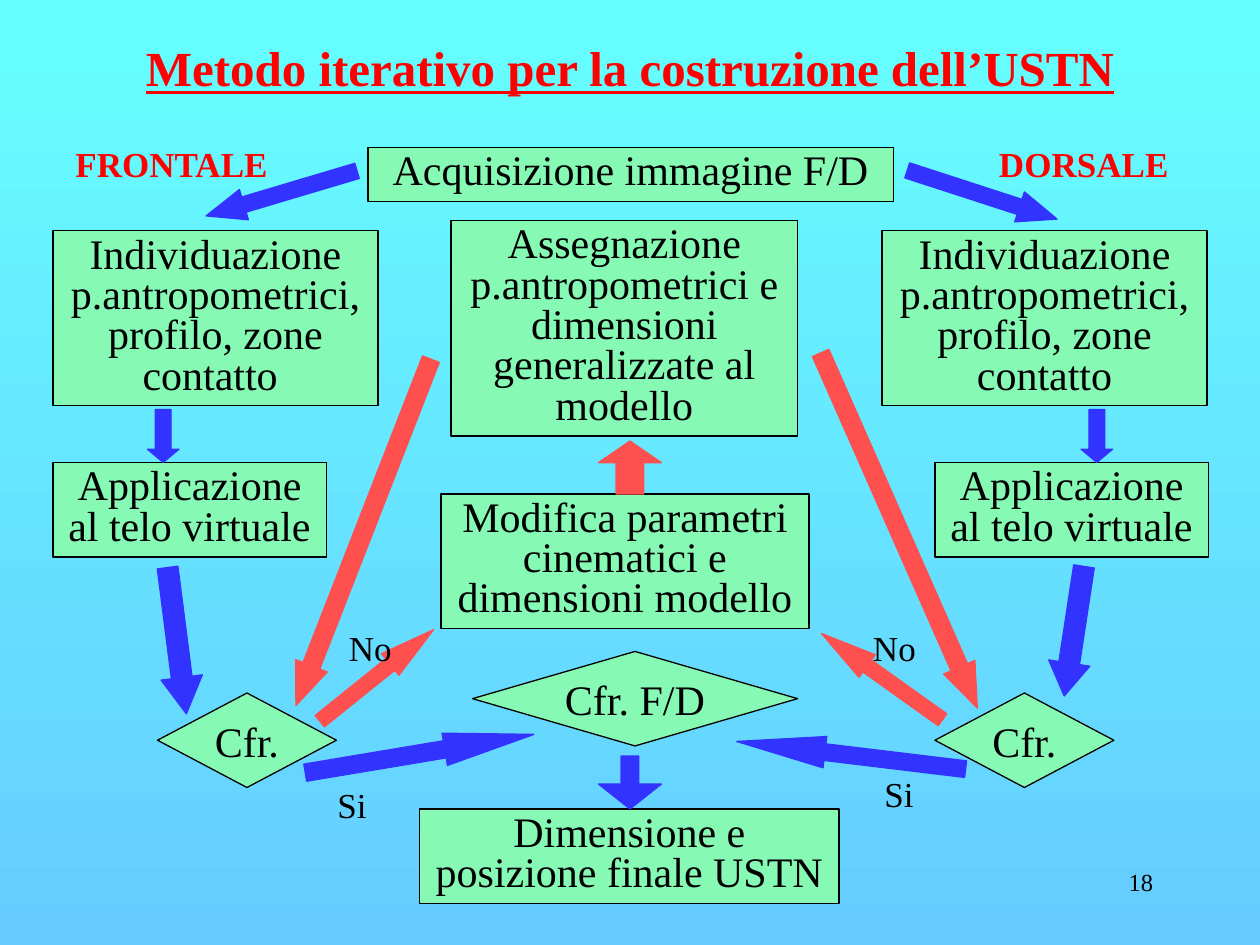
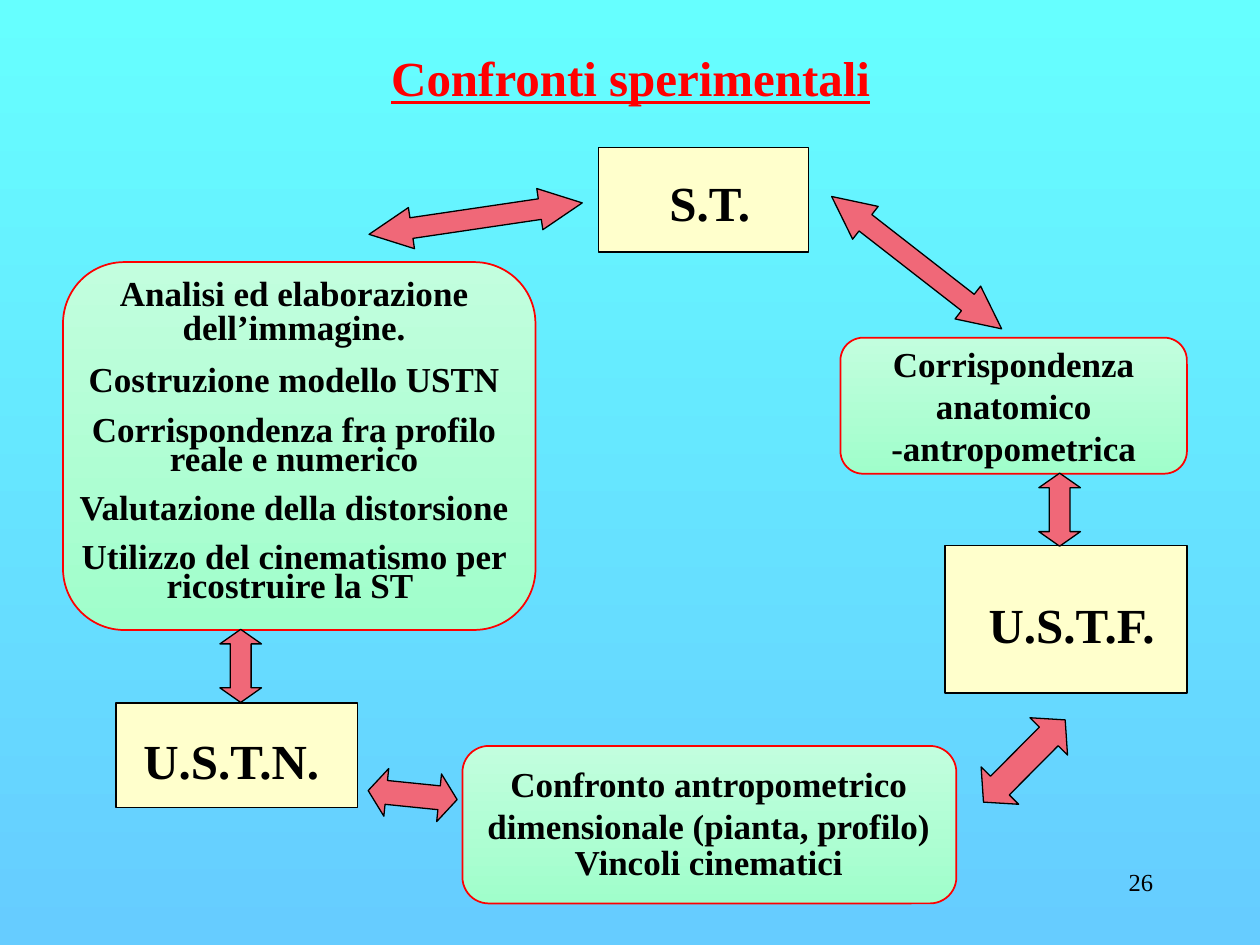
from dataclasses import dataclass
from typing import NamedTuple

from pptx import Presentation
from pptx.dml.color import RGBColor
from pptx.dml.fill import FillFormat
from pptx.enum.shapes import MSO_SHAPE
from pptx.enum.text import MSO_ANCHOR, MSO_AUTO_SIZE, PP_ALIGN
from pptx.presentation import Presentation as Deck
from pptx.shapes.autoshape import Shape
from pptx.slide import Slide
from pptx.text.text import TextFrame
from pptx.util import Inches, Pt


@dataclass(frozen=True)
class Theme:
    font: str = "Times New Roman"
    sky: tuple[str, str] = ("66FFFF", "66CCFF")
    mint: tuple[str, str] = ("C2FEDE", "A0FECB")
    step: str = "86FAB5"
    cream: str = "FFFFCC"
    forward: str = "3333FF"
    feedback: str = "FF5050"
    exchange: str = "F06878"
    accent: str = "FF0000"
    ink: str = "000000"
    heading_size: int = 28
    step_size: int = 24
    label_size: int = 20
    number_size: int = 14
    thin: float = 0.75
    rounded_line: float = 1
    paragraph_gap: int = 11


THEME = Theme()


class Frame(NamedTuple):
    left: float
    top: float
    width: float
    height: float


class Style(NamedTuple):
    size: int
    color: str = THEME.ink
    bold: bool = False
    underline: bool = False
    align: PP_ALIGN = PP_ALIGN.CENTER


class Line(NamedTuple):
    text: str
    spacing: float = 1


class Arrow(NamedTuple):
    frame: Frame
    color: str
    shaft: float
    head: float
    rotation: float = 0
    preset: MSO_SHAPE = MSO_SHAPE.DOWN_ARROW
    outline: str = ""


HEADING = Style(THEME.heading_size, THEME.accent, True, True)
STEP = Style(THEME.step_size)
ANSWER = Style(THEME.label_size, align=PP_ALIGN.LEFT)
SIDE = Style(THEME.label_size, THEME.accent, True, align=PP_ALIGN.LEFT)
ACRONYM = Style(THEME.heading_size, bold=True)
COMPARISON = Style(THEME.label_size, bold=True)
NUMBER = Style(THEME.number_size, align=PP_ALIGN.RIGHT)


def rgb(value: str) -> RGBColor:
    return RGBColor.from_string(value)


def paint_gradient(fill: FillFormat, colors: tuple[str, str]) -> None:
    fill.gradient()
    fill.gradient_angle = 270
    for stop, color in zip(fill.gradient_stops, colors):
        stop.color.rgb = rgb(color)


def write(frame: TextFrame, lines: list[Line], style: Style,
          anchor: MSO_ANCHOR = MSO_ANCHOR.TOP, wrap: bool = True) -> None:
    frame.word_wrap = wrap
    frame.auto_size = MSO_AUTO_SIZE.NONE
    frame.vertical_anchor = anchor
    for index, line in enumerate(lines):
        paragraph = frame.add_paragraph() if index else frame.paragraphs[0]
        paragraph.alignment = style.align
        paragraph.line_spacing = line.spacing
        paragraph.space_before = Pt(THEME.paragraph_gap if index else 0)
        run = paragraph.add_run()
        run.text = line.text
        run.font.name = THEME.font
        run.font.size = Pt(style.size)
        run.font.bold = style.bold
        run.font.underline = style.underline
        run.font.color.rgb = rgb(style.color)


def add_panel(slide: Slide, preset: MSO_SHAPE, frame: Frame, fill: str | tuple[str, str],
              outline: str = THEME.ink, weight: float = THEME.thin) -> Shape:
    panel = slide.shapes.add_shape(preset, *map(Inches, frame))
    panel.shadow.inherit = False
    if isinstance(fill, tuple):
        paint_gradient(panel.fill, fill)
    else:
        panel.fill.solid()
        panel.fill.fore_color.rgb = rgb(fill)
    panel.line.color.rgb = rgb(outline)
    panel.line.width = Pt(weight)
    return panel


def add_label(slide: Slide, frame: Frame, lines: list[Line], style: Style) -> None:
    label = slide.shapes.add_textbox(*map(Inches, frame))
    write(label.text_frame, lines, style)


def add_step(slide: Slide, frame: Frame, text: str) -> None:
    step = add_panel(slide, MSO_SHAPE.RECTANGLE, frame, THEME.step)
    write(step.text_frame, [Line(text, 0.8)], STEP)


def add_decision(slide: Slide, frame: Frame, text: str) -> None:
    decision = add_panel(slide, MSO_SHAPE.FLOWCHART_DECISION, frame, THEME.step)
    write(decision.text_frame, [Line(text)], STEP, MSO_ANCHOR.MIDDLE, False)


def add_arrow(slide: Slide, arrow: Arrow) -> None:
    shape = add_panel(slide, arrow.preset, arrow.frame, arrow.color, arrow.outline or arrow.color)
    shape.adjustments[0] = arrow.shaft
    shape.adjustments[1] = arrow.head
    shape.rotation = arrow.rotation


def add_exchange(slide: Slide, frame: Frame, head: float, rotation: float) -> None:
    add_arrow(slide, Arrow(frame, THEME.exchange, 0.5, head, rotation,
                           MSO_SHAPE.LEFT_RIGHT_ARROW, THEME.ink))


def add_comparison(slide: Slide, frame: Frame, text_frame: Frame, lines: list[Line]) -> None:
    add_panel(slide, MSO_SHAPE.FLOWCHART_ALTERNATE_PROCESS, frame, THEME.mint,
              THEME.accent, THEME.rounded_line)
    add_label(slide, text_frame, lines, COMPARISON)


def start_slide(deck: Deck, title: str, title_frame: Frame, number: int) -> Slide:
    slide = deck.slides.add_slide(deck.slide_layouts[5])
    heading = slide.shapes.title
    heading.left, heading.top, heading.width, heading.height = map(Inches, title_frame)
    write(heading.text_frame, [Line(title)], HEADING)
    add_label(slide, Frame(7.17, 6.83, 2.08, 0.5), [Line(str(number))], NUMBER)
    return slide


def build_method(deck: Deck) -> None:
    slide = start_slide(deck, "Metodo iterativo per la costruzione dell’USTN",
                        Frame(0, 0.25, 10, 0.57), 18)
    detection = "Individuazione p.antropometrici, profilo, zone contatto"
    application = "Applicazione al telo virtuale"
    steps = [
        (Frame(2.92, 1.17, 4.17, 0.43), "Acquisizione immagine F/D"),
        (Frame(7, 1.83, 2.58, 1.39), detection),
        (Frame(0.42, 1.83, 2.58, 1.39), detection + " "),
        (Frame(3.58, 1.75, 2.75, 1.71),
         "Assegnazione p.antropometrici e dimensioni generalizzate al modello"),
        (Frame(0.42, 3.67, 2.17, 0.75), application),
        (Frame(7.42, 3.67, 2.17, 0.75), application),
        (Frame(3.5, 3.92, 2.92, 1.07), "Modifica parametri cinematici e dimensioni modello"),
        (Frame(3.33, 6.42, 3.33, 0.75), "Dimensione e posizione finale USTN"),
    ]
    for frame, text in steps:
        add_step(slide, frame, text)

    decisions = [
        (Frame(7.42, 5.5, 1.42, 0.75), "Cfr."),
        (Frame(1.25, 5.5, 1.42, 0.75), "Cfr."),
        (Frame(3.75, 5.17, 2.58, 0.75), "Cfr. F/D"),
    ]
    for frame, text in decisions:
        add_decision(slide, frame, text)

    forward, feedback = THEME.forward, THEME.feedback
    arrows = [
        Arrow(Frame(4.75, 3.5, 0.5, 0.42), feedback, 0.44, 0.41, preset=MSO_SHAPE.UP_ARROW),
        Arrow(Frame(8.58, 3.25, 0.25, 0.42), forward, 0.5, 0.42),
        Arrow(Frame(1.17, 3.25, 0.25, 0.42), forward, 0.5, 0.42),
        Arrow(Frame(8.36, 4.49, 0.33, 1.04), forward, 0.5, 0.8, 8.7),
        Arrow(Frame(1.24, 4.5, 0.33, 1.17), forward, 0.5, 0.88, 352.7),
        Arrow(Frame(4.75, 6, 0.5, 0.42), forward, 0.28, 0.47),
        Arrow(Frame(2.11, 0.91, 0.25, 1.25), forward, 0.5, 1.25, 73.4),
        Arrow(Frame(7.67, 0.92, 0.25, 1.25), forward, 0.5, 1.25, 288),
        Arrow(Frame(3.2, 5.06, 0.26, 1.84), forward, 0.53, 2.76, 260.5),
        Arrow(Frame(2.88, 4.78, 0.22, 1.16), feedback, 0.53, 2.01, 231.2),
        Arrow(Frame(2.75, 2.75, 0.27, 2.95), feedback, 0.53, 1.25, 21.3),
        Arrow(Frame(7, 2.67, 0.27, 3.08), feedback, 0.53, 1.31, 336.2),
        Arrow(Frame(6.89, 4.78, 0.22, 1.18), feedback, 0.53, 2.02, 125.5),
        Arrow(Frame(6.63, 5.08, 0.25, 1.83), forward, 0.53, 2.82, 96.9),
    ]
    for arrow in arrows:
        add_arrow(slide, arrow)

    answers = [(6.92, 6.08, "Si"), (2.67, 4.92, "No"), (6.83, 4.92, "No"), (2.58, 6.17, "Si")]
    for left, top, answer in answers:
        add_label(slide, Frame(left, top, 0.58, 0.43), [Line(answer)], ANSWER)
    for left, side in [(7.83, "DORSALE"), (0.5, "FRONTALE")]:
        add_label(slide, Frame(left, 1.08, 1.75, 0.43), [Line(side)], SIDE)


def build_comparisons(deck: Deck) -> None:
    slide = start_slide(deck, "Confronti sperimentali", Frame(2.92, 0.33, 4.17, 0.57), 26)
    add_comparison(slide, Frame(6.67, 2.68, 2.75, 1.08), Frame(6.67, 2.67, 2.75, 1.1),
                   [Line("Corrispondenza anatomico -antropometrica")])
    add_comparison(slide, Frame(3.67, 5.92, 3.92, 1.25), Frame(3.75, 6, 3.75, 1.03), [
        Line("Confronto antropometrico dimensionale (pianta, profilo) "),
        Line("Vincoli cinematici", 0.3),
    ])
    add_comparison(slide, Frame(0.5, 2.08, 3.75, 2.92), Frame(0.5, 2.17, 3.67, 2.73), [
        Line("Analisi ed elaborazione dell’immagine.", 0.8),
        Line("Costruzione modello USTN", 0.8),
        Line("Corrispondenza fra profilo reale e numerico", 0.7),
        Line("Valutazione della distorsione", 0.7),
        Line("Utilizzo del cinematismo per ricostruire la ST ", 0.7),
    ])

    acronyms = [
        (Frame(4.75, 1.17, 1.67, 0.83), Frame(5.01, 1.32, 1.15, 0.57), " S.T."),
        (Frame(7.5, 4.33, 1.92, 1.17), Frame(7.67, 4.67, 1.67, 0.57), "U.S.T.F."),
        (Frame(0.92, 5.58, 1.92, 0.83), Frame(1, 5.75, 1.67, 0.57), "U.S.T.N."),
    ]
    for frame, text_frame, acronym in acronyms:
        add_panel(slide, MSO_SHAPE.RECTANGLE, frame, THEME.cream)
        add_label(slide, text_frame, [Line(acronym)], ACRONYM)

    exchanges = [
        (Frame(1.62, 5.12, 0.58, 0.33), 0.35, 90),
        (Frame(8.12, 3.88, 0.58, 0.33), 0.35, 90),
        (Frame(2.92, 6.12, 0.71, 0.38), 0.38, 185.8),
        (Frame(7.67, 5.83, 0.92, 0.42), 0.44, 314.8),
        (Frame(2.92, 1.57, 1.71, 0.33), 1.03, 351.6),
        (Frame(6.42, 1.92, 1.71, 0.33), 1.03, 37.9),
    ]
    for frame, head, rotation in exchanges:
        add_exchange(slide, frame, head, rotation)


def main() -> None:
    deck = Presentation()
    deck.slide_width = Inches(10)
    deck.slide_height = Inches(7.5)
    paint_gradient(deck.slide_master.background.fill, THEME.sky)
    build_method(deck)
    build_comparisons(deck)
    deck.save("out.pptx")


if __name__ == "__main__":
    main()
